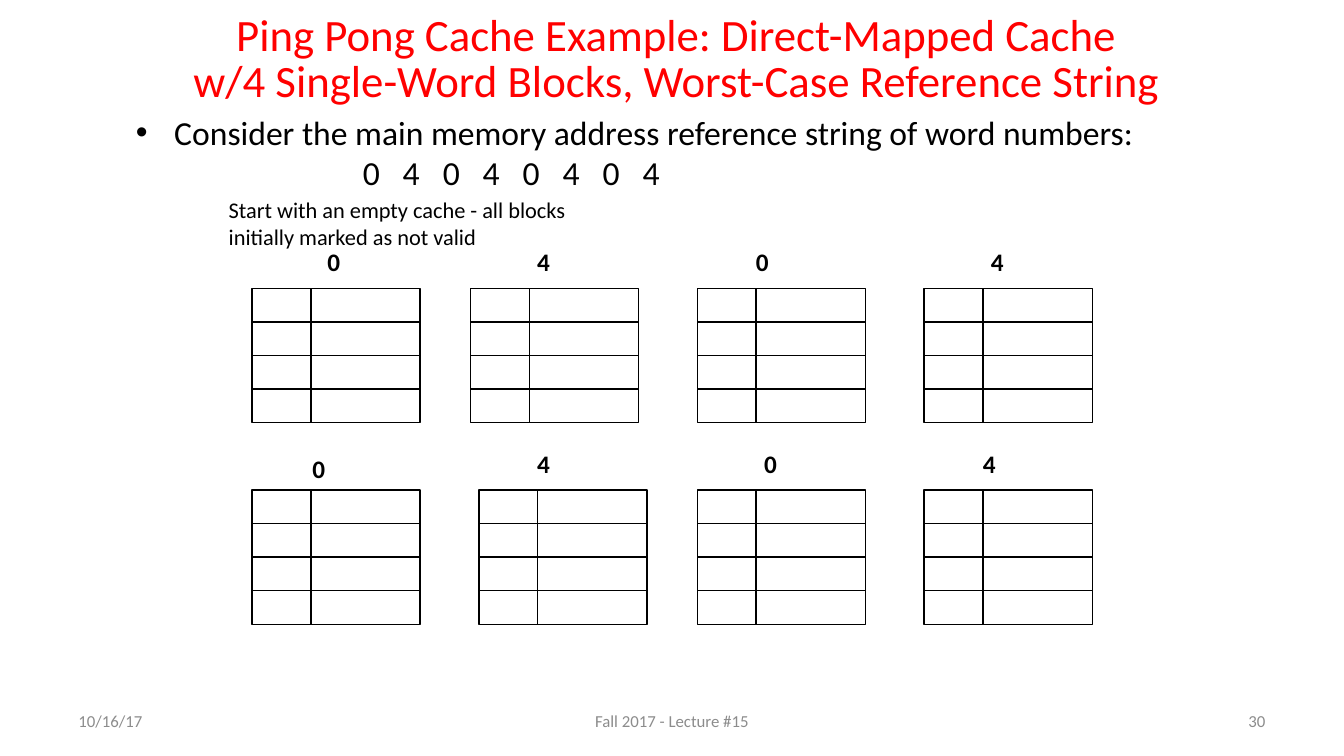
from lxml import etree
from pptx import Presentation
from pptx import util as u
from pptx.dml.color import RGBColor
from pptx.enum import shapes, text
from pptx.oxml.ns import qn

FONT = "Calibri"
COLUMN = u.Inches(1 / 12)  # horizontal grid unit
BLOCK_HEIGHT = u.Inches(1 / 3)
BLOCKS = 4
TAG_COLUMNS, DATA_COLUMNS = 7, 13


def color(hex_string):
    return RGBColor.from_string(hex_string)


def write(frame, lines, size, hex_string, align=text.PP_ALIGN.LEFT, bold=False):
    frame.text = lines
    for para in frame.paragraphs:
        para.alignment = align
        para.font.name = FONT
        para.font.size = u.Pt(size)
        para.font.bold = bold
        para.font.color.rgb = color(hex_string)


deck = Presentation()
deck.slide_width, deck.slide_height = u.Inches(13.33), u.Inches(7.5)
page = deck.slides.add_slide(deck.slide_layouts[5])

# Title
title = page.shapes.title
title.left, title.top = u.Inches(1.53), u.Inches(0.09)
title.width, title.height = u.Inches(10.36), u.Inches(1.03)
write(title.text_frame,
      "Ping Pong Cache Example: Direct-Mapped Cache\v"
      "w/4 Single-Word Blocks, Worst-Case Reference String",
      32, "FF0000", text.PP_ALIGN.CENTER)
title.text_frame.auto_size = text.MSO_AUTO_SIZE.NONE
title.text_frame.vertical_anchor = text.MSO_ANCHOR.MIDDLE
title.text_frame.paragraphs[0].line_spacing = 0.85

# Caches: top, then (first grid column, label left, label top, word) for each
cache_rows = [
    (2.86, [(30, 3.15, 2.39, "0"), (56, 5.23, 2.39, "4"),
            (83, 7.4, 2.39, "0"), (110, 9.73, 2.39, "4")]),
    (4.86, [(30, 3, 4.45, "0"), (57, 5.23, 4.4, "4"),
            (83, 7.48, 4.4, "0"), (110, 9.65, 4.4, "4")]),
]
for cache_top, caches in cache_rows:
    top = u.Inches(cache_top)
    for first, label_left, label_top, word in caches:
        # Tag and data fields, each divided into blocks
        for start, span in ((first, TAG_COLUMNS),
                            (first + TAG_COLUMNS, DATA_COLUMNS)):
            left, width = start * COLUMN, span * COLUMN
            field = page.shapes.add_group_shape()
            box = field.shapes.add_shape(shapes.MSO_SHAPE.RECTANGLE, left, top,
                                         width, BLOCKS * BLOCK_HEIGHT)
            box.shadow.inherit = False
            box.fill.background()
            box.line.color.rgb = color("000000")
            box.line.width = u.Pt(1)
            for block in range(1, BLOCKS):
                y = top + block * BLOCK_HEIGHT
                divider = field.shapes.add_connector(
                    shapes.MSO_CONNECTOR.STRAIGHT, left, y, left + width, y)
                divider.line.color.rgb = color("000000")
                divider.line.width = u.Pt(1)
                etree.SubElement(divider._element.spPr, qn("a:effectLst"))
                if block == BLOCKS // 2:
                    divider.begin_connect(box, 1)
                    divider.end_connect(box, 3)

        # Referenced word
        label = page.shapes.add_textbox(u.Inches(label_left), u.Inches(label_top),
                                        u.Inches(0.34), u.Inches(0.4))
        label.text_frame.word_wrap = False
        write(label.text_frame, word, 18, "000000", bold=True)

# Reference string: a bullet and an indented line of spaced word numbers
body = page.shapes.add_textbox(u.Inches(1.25), u.Inches(1.06),
                               u.Inches(10.4), u.Inches(1.1))
body.text_frame.word_wrap = True
write(body.text_frame,
      "Consider the main memory address reference string of word numbers:\n"
      "0 4 0 4 0 4 0 4", 24, "000000")
bullet, numbers = body.text_frame.paragraphs
bullet_format = bullet._p.get_or_add_pPr()
bullet_format.set("marL", str(u.Inches(0.38)))
bullet_format.set("indent", str(-u.Inches(0.38)))
mark_font = etree.Element(qn("a:buFont"), typeface="Arial")
mark = etree.Element(qn("a:buChar"), char="•")
bullet_format.insert(0, mark_font)
mark_font.addnext(mark)
numbers._p.get_or_add_pPr().set("marL", str(u.Inches(2.25)))
numbers.runs[0].font._element.set("spc", "550")

# Starting state
note = page.shapes.add_textbox(u.Inches(2.17), u.Inches(1.9),
                               u.Inches(3.75), u.Inches(0.64))
note.text_frame.word_wrap = True
write(note.text_frame,
      "Start with an empty cache - all blocks initially marked as not valid",
      16, "000000")

# Footer
for left, width, words, align in (
        (0.68, 2.33, "10/16/17", text.PP_ALIGN.LEFT),
        (5.08, 3.17, "Fall 2017 - Lecture #15", text.PP_ALIGN.CENTER),
        (10.32, 2.33, "30", text.PP_ALIGN.RIGHT)):
    footer = page.shapes.add_textbox(u.Inches(left), u.Inches(6.95),
                                     u.Inches(width), u.Inches(0.4))
    footer.text_frame.word_wrap = True
    footer.text_frame.vertical_anchor = text.MSO_ANCHOR.MIDDLE
    write(footer.text_frame, words, 12, "8C8C8C", align)

deck.save("out.pptx")
